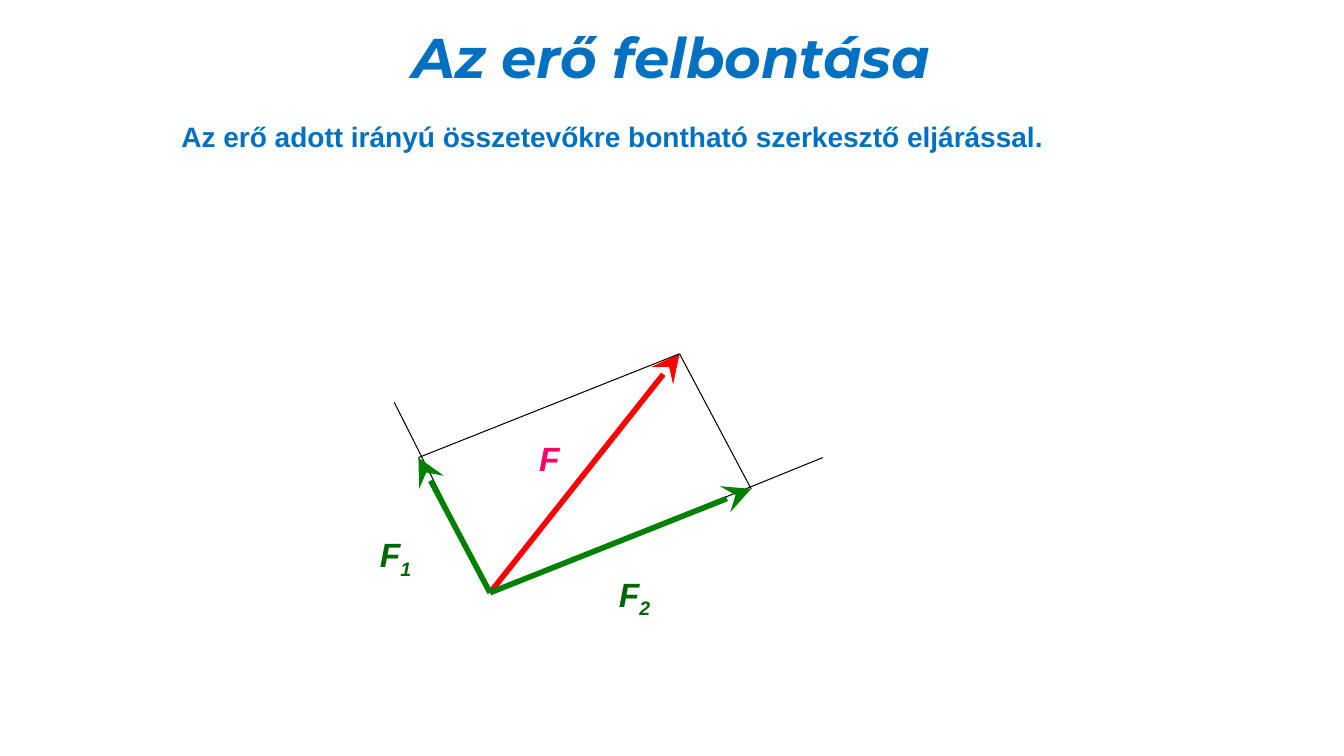
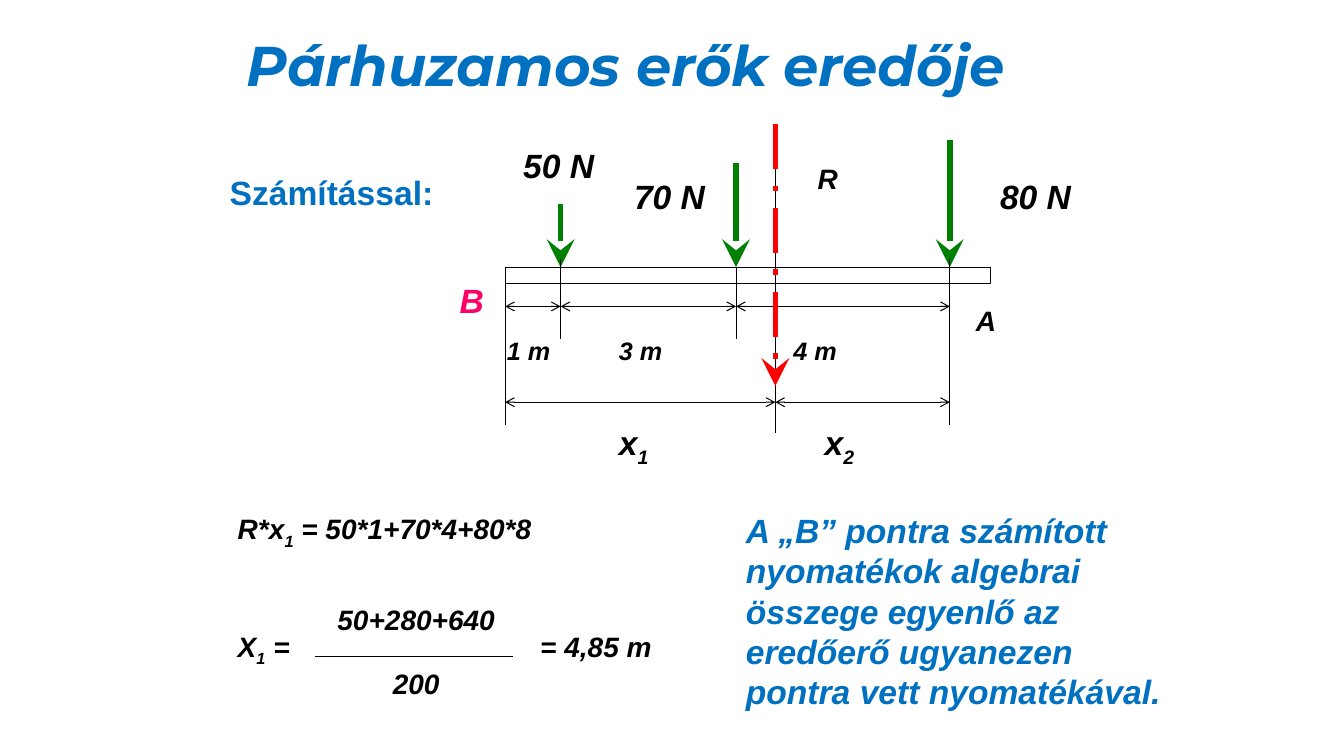
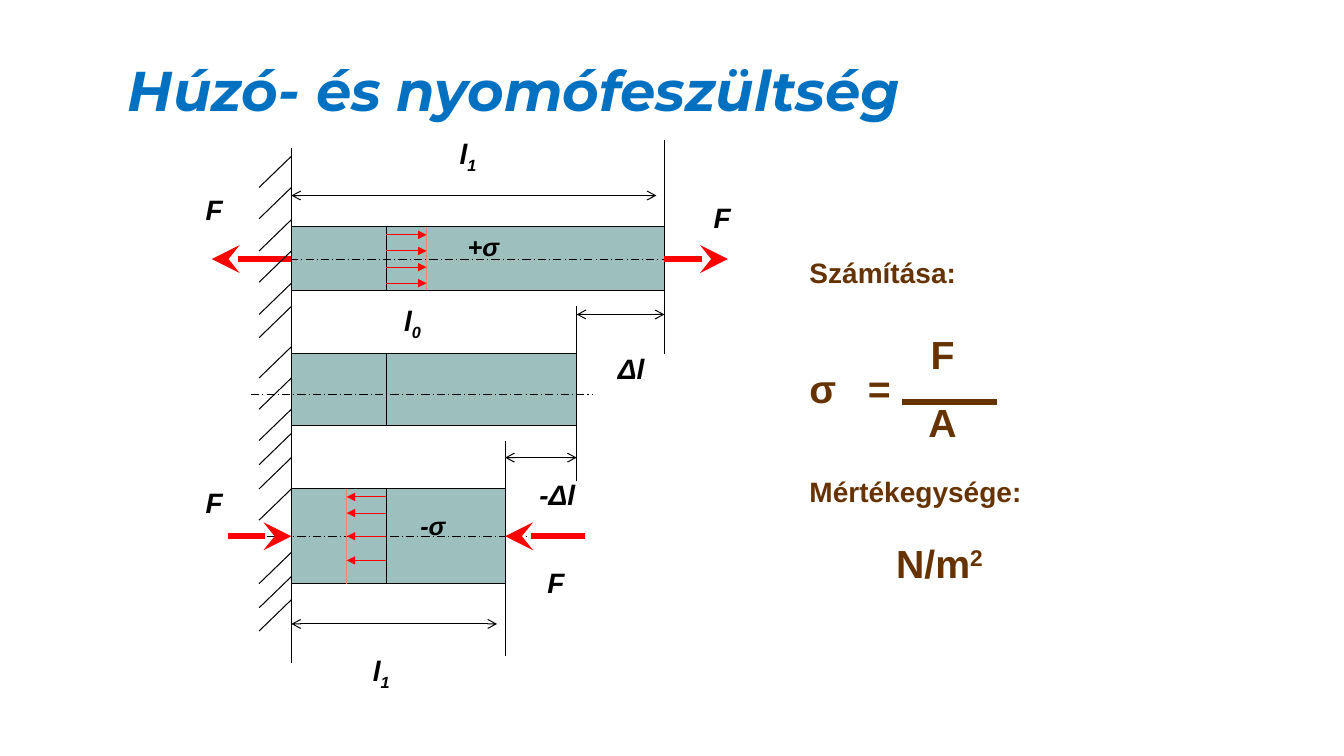
import pptx
import pptx.util
import pptx.dml.color
import pptx.enum.dml
import pptx.enum.shapes
import pptx.enum.text
from lxml import etree
from pptx.oxml.ns import qn

Inches, Pt = pptx.util.Inches, pptx.util.Pt
RGBColor = pptx.dml.color.RGBColor
ALIGN = pptx.enum.text.PP_ALIGN
ANCHOR = pptx.enum.text.MSO_ANCHOR

# Shared colours
BLUE = RGBColor(0x00, 0x70, 0xC0)
BLACK = RGBColor(0x00, 0x00, 0x00)
RED = RGBColor(0xFF, 0x00, 0x00)
GREEN = RGBColor(0x00, 0x80, 0x00)
DARK_GREEN = RGBColor(0x00, 0x66, 0x00)
PINK = RGBColor(0xFF, 0x00, 0x66)
SALMON = RGBColor(0xFF, 0x7C, 0x80)
TEAL = RGBColor(0x9D, 0xBF, 0xBE)
BROWN = RGBColor(0x66, 0x33, 0x00)


class Deck:
    TITLE = dict(name="Montserrat", size=Pt(40), bold=True, italic=True)
    BODY = dict(name="Arial", bold=True, italic=False)
    THIN, THICK = 0.75, 4

    def __init__(self):
        self.prs = pptx.Presentation()
        self.prs.slide_width, self.prs.slide_height = Inches(13.33), Inches(7.5)

    def slide(self, title, x, y, w, h, align=ALIGN.LEFT):
        self.s = self.prs.slides.add_slide(self.prs.slide_layouts[6])
        self.text(x, y, w, h, [dict(text=title, line=0.9)], BLUE, self.TITLE, align, ANCHOR.MIDDLE)

    def text(self, x, y, w, h, paras, color, style, align=ALIGN.LEFT, anchor=ANCHOR.TOP):
        """Each paragraph is a dict: text, and optionally size, before, line, tabs, base."""
        tf = self.s.shapes.add_textbox(Inches(x), Inches(y), Inches(w), Inches(h)).text_frame
        tf.word_wrap, tf.vertical_anchor = True, anchor
        for i, para in enumerate(paras):
            p = tf.add_paragraph() if i else tf.paragraphs[0]
            if "tabs" in para:
                tabs = etree.SubElement(p._p.get_or_add_pPr(), qn("a:tabLst"))
                for pos, algn in para["tabs"]:
                    etree.SubElement(tabs, qn("a:tab"), pos=str(Inches(pos)), algn=algn)
            p.alignment = align
            p.line_spacing = para.get("line", 1.0)
            p.space_before = Pt(para.get("before", 0))
            fmt = dict(style, size=Pt(para["size"])) if "size" in para else style
            self.runs(p, para["text"], fmt, color, para.get("base", -25))

    def runs(self, p, text, fmt, color, base):
        """The character after each underscore is shifted by base percent."""
        first, *rest = text.split("_")
        parts = [(first, 0)]
        for part in rest:
            parts += [(part[0], base), (part[1:], 0)]
        for part, shift in parts:
            if not part:
                continue
            r = p.add_run()
            r.text = part
            for name, value in fmt.items():
                setattr(r.font, name, value)
            r.font.color.rgb = color
            if shift:
                r._r.get_or_add_rPr().set("baseline", str(shift * 1000))

    def label(self, text, x, y, w, size=20, color=BLACK):
        self.text(x, y, w, round(size / 60 + 0.1, 2), [dict(text=text, size=size)], color,
                  dict(self.BODY, italic=True))

    def line(self, x1, y1, x2, y2, color=BLACK, width=THIN, head=None, tail=None, dash=False):
        c = self.s.shapes.add_connector(pptx.enum.shapes.MSO_CONNECTOR.STRAIGHT,
                                        Inches(x1), Inches(y1), Inches(x2), Inches(y2))
        c.line.color.rgb, c.line.width = color, Pt(width)
        if dash:
            c.line.dash_style = pptx.enum.dml.MSO_LINE.LONG_DASH_DOT
        sp_pr = c._element.spPr
        scale = "lg" if width >= self.THICK else "med"
        for tag, kind in (("a:headEnd", head), ("a:tailEnd", tail)):
            if kind:
                etree.SubElement(sp_pr.find(qn("a:ln")), qn(tag), type=kind, w=scale, len=scale)
        etree.SubElement(sp_pr, qn("a:effectLst"))

    def force(self, x1, y1, x2, y2, color=RED, dash=False):
        self.line(x1, y1, x2, y2, color, self.THICK, tail="stealth", dash=dash)

    def dimension(self, x1, x2, y):
        self.line(x1, y, x2, y, head="arrow", tail="arrow")

    def bar(self, x, y, w, h, fill=None):
        sp = self.s.shapes.add_shape(pptx.enum.shapes.MSO_SHAPE.RECTANGLE,
                                     Inches(x), Inches(y), Inches(w), Inches(h))
        sp.shadow.inherit = False
        if fill is None:
            sp.fill.background()
        else:
            sp.fill.solid()
            sp.fill.fore_color.rgb = fill
        sp.line.color.rgb, sp.line.width = BLACK, Pt(self.THIN)


def force_components(d):
    d.slide("Az erő felbontása", 2.35, 0.09, 8.62, 1.02, ALIGN.CENTER)
    d.text(1.7, 1.17, 9.77, 1.12,
           [dict(text="Az erő adott irányú összetevőkre bontható szerkesztő eljárással.",
                 size=20, line=0.9)], BLUE, d.BODY)

    # Parallelogram of forces
    origin, f, f1, f2 = (4.86, 5.88), (6.74, 3.51), (4.15, 4.54), (7.45, 4.85)
    d.force(*origin, *f)
    for start, end in ((origin, (3.91, 3.99)), (origin, (8.16, 4.54)), (f, f2), (f, f1)):
        d.line(*start, *end)
    for component in (f2, f1):
        d.force(*origin, *component, GREEN)
    d.label("F", 5.25, 4.3, 0.47, 24, PINK)
    d.label("F_1", 3.67, 5.25, 0.63, 24, DARK_GREEN)
    d.label("F_2", 6.04, 5.64, 0.79, 24, DARK_GREEN)


def parallel_forces(d):
    d.slide("Párhuzamos erők eredője", 2.35, 0.15, 8.62, 1.06)
    d.text(2.18, 1.7, 2.85, 0.47, [dict(text="Számítással:", size=24, line=0.9)], BLUE, d.BODY)

    # Beam, loads and spans
    left, right, resultant, top = 5.01, 9.42, 7.69, 2.65
    loads = ((5.56, 2.02), (7.3, 1.62), (right, 1.39))
    d.bar(left, top, 4.81, 0.16)
    for x, y in loads:
        d.force(x, y, x, top, GREEN)
    for x, y1, y2 in ((left, 2.81, 4.22), (5.56, 2.57, 3.36), (7.3, top, 3.36),
                      (right, 2.57, 4.22), (resultant, 1.23, 4.3)):
        d.line(x, y1, x, y2)
    stops = [left] + [x for x, _ in loads]
    for x1, x2 in zip(stops, stops[1:]):
        d.dimension(x1, x2, 3.04)
    d.dimension(left, resultant, 3.99)
    d.dimension(resultant, right, 3.99)
    d.force(resultant, 1.23, resultant, 3.83, dash=True)

    # Labels
    for text, x, y, w in (("50 N", 5.09, 1.39, 1.02), ("70 N", 6.19, 1.7, 1.18),
                          ("80 N", 9.82, 1.7, 1.5), ("x_1", 6.04, 4.14, 0.71),
                          ("x_2", 8.08, 4.14, 0.79)):
        d.label(text, x, y, w, 24)
    for text, x in (("1 m", 4.93), ("3 m", 6.04), ("4 m", 7.77)):
        d.label(text, x, 3.28, 1.1, 18)
    d.label("B", 4.46, 2.73, 0.47, 24, PINK)
    d.label("R", 8.01, 1.55, 0.71)
    d.label("A", 9.58, 2.96, 0.79)

    # Calculation
    row = dict(size=20, line=Pt(23))
    centred = dict(row, tabs=[(1.77, "ctr")])
    d.text(2.26, 5.09, 4.9, 1.93,
           [dict(row, text="R*x_1 = 50*1+70*4+80*8"),
            dict(centred, text="\t50+280+640", before=38),
            dict(row, text="X_1 =\t= 4,85 m", tabs=[(3, "l")]),
            dict(centred, text="\t200")], BLACK, dict(d.BODY, italic=True))
    d.line(3.12, 6.51, 5.09, 6.51)
    d.text(7.3, 5.01, 4.33, 2.12,
           [dict(text="A „B” pontra számított nyomatékok algebrai összege egyenlő az "
                      "eredőerő ugyanezen pontra vett nyomatékával.", size=24)],
           BLUE, dict(d.BODY, italic=True))


def normal_stress(d):
    d.slide("Húzó- és nyomófeszültség", 1.17, 0.05, 11, 1.76)
    wall, cut = 2.89, 3.83
    pulled, free, pressed = 6.59, 5.72, 5.01
    bars = ((free, 3.51, 0.71), (pulled, 2.25, 0.63), (pressed, 4.85, 0.94))

    # Wall, bars and axes
    d.line(wall, 1.47, wall, 6.58)
    for end, y, h in bars:
        d.bar(wall, y, end - wall, h, TEAL)
    for x1, x2, y in ((2.49, 5.88, 3.91), (2.49, 5.25, 5.32), (2.57, 6.9, 2.57)):
        d.line(x1, y, x2, y, dash=True)

    # Forces
    for x1, x2, y in ((pulled, 7.22, 2.57), (5.8, pressed, 5.32),
                      (2.26, wall, 5.32), (wall, 2.1, 2.57)):
        d.force(x1, y, x2, y)

    # Hatching
    for y in (1.55, 1.86, 2.18, 2.49, 2.81, 3.04, 3.44, 3.75, 4.06, 4.3, 4.54, 4.85,
              5.48, 5.72, 5.95):
        d.line(wall, y, wall - 0.32, y + 0.31)

    # Dimensions
    for x, y1, y2 in ((pulled, 1.39, 2.33), (pulled, 2.81, 3.51), (free, 3.04, 3.51),
                      (free, 4.14, 4.77), (pressed, 4.38, 4.93), (pressed, 5.72, 6.51)):
        d.line(x, y1, x, y2)
    for x1, x2, y in ((wall, 6.51, 1.94), (free, pulled, 3.12),
                      (pressed, free, 4.54), (wall, 4.93, 6.19)):
        d.dimension(x1, x2, y)

    # Cross-sections and stresses
    for _, y, h in bars:
        d.line(cut, y, cut, y + h)
    for x, y, h, rows in ((4.23, 2.25, 0.63, (2.33, 2.49, 2.65, 2.81)),
                          (3.44, 4.85, 0.94, (4.93, 5.09, 5.32, 5.56))):
        d.line(x, y, x, y + h, SALMON)
        for row in rows:
            d.line(cut, row, x, row, RED, tail="triangle")

    # Labels
    for text, x, y in (("l_1", 4.46, 1.31), ("F", 1.94, 1.86), ("F", 6.98, 1.94),
                       ("F", 1.94, 4.77), ("F", 5.33, 5.56), ("Δl", 6.03, 3.44),
                       ("-Δl", 5.25, 4.69), ("l_1", 3.6, 6.43), ("l_0", 3.91, 2.96)):
        d.label(text, x, y, 0.71)
    d.label("+σ", 4.54, 2.25, 0.63, 18)
    d.label("-σ", 4.07, 5.01, 0.63, 18)

    # Formula
    row = dict(size=28, line=Pt(24))
    centred = dict(row, tabs=[(1.32, "ctr")])
    d.text(7.93, 2.49, 2.99, 3.57,
           [dict(text="Számítása:", size=20),
            dict(centred, text="\tF", before=39),
            dict(row, text="σ\t=", tabs=[(0.58, "l")]),
            dict(centred, text="\tA"),
            dict(text="Mértékegysége:", size=20, before=21),
            dict(text="\tN/m_2", size=28, before=22, base=30, tabs=[(0.86, "l")])],
           BROWN, d.BODY)
    d.line(8.95, 3.99, 9.89, 3.99, BROWN, 4.5)


def main():
    d = Deck()
    force_components(d)
    parallel_forces(d)
    normal_stress(d)
    d.prs.save("out.pptx")


if __name__ == "__main__":
    main()
